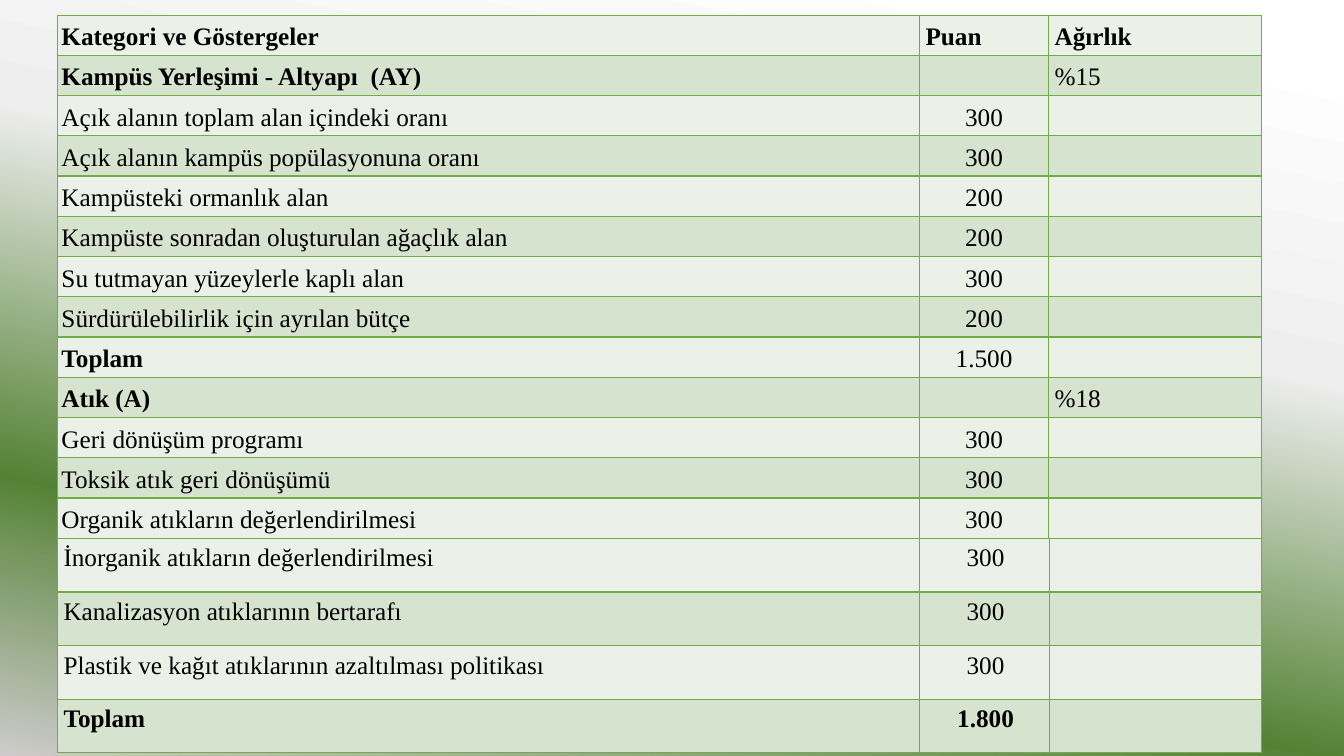
"""Build the campus sustainability scoring slide with its two indicator tables."""
from dataclasses import dataclass

from lxml.etree import SubElement
from pptx import Presentation
from pptx.dml.color import RGBColor
from pptx.enum.text import PP_ALIGN
from pptx.oxml.ns import qn
from pptx.util import Inches, Pt


@dataclass(frozen=True)
class Theme:
    font: str = "Times New Roman"
    size: float = 18
    text: str = "000000"
    border: str = "70AD47"
    border_width: float = 1
    bands: tuple = ("EBF1E9", "D5E3CF")
    line_spacing: float = 1.07
    backdrop: tuple = ((6, "FFFFFF"), (37, "EEEEEE"), (73, "548235"), (80, "75965E"), (100, "CDCBCB"))
    backdrop_angle: int = 102


@dataclass(frozen=True)
class Entry:
    label: str
    points: str = ""
    weight: str = ""
    bold: tuple = (False, False, False)


@dataclass(frozen=True)
class ScoreTable:
    top: float
    height: float
    widths: tuple
    margins: dict
    indents: tuple
    entries: tuple
    has_header: bool = False


THEME = Theme()
TABLE_LEFT = 0.57
LABEL_BOLD = (True, False, False)
ALL_BOLD = (True, True, True)

MAIN_SCORES = ScoreTable(
    top=0.15,
    height=5.19,
    widths=(8.55, 1.28, 2.11),
    margins={"margin_left": 0.04, "margin_top": 0.06, "margin_right": 0.06, "margin_bottom": 0},
    indents=(0, 0.02, 0.02),
    has_header=True,
    entries=(
        Entry("Kategori ve Göstergeler", "Puan", "Ağırlık", ALL_BOLD),
        Entry("Kampüs Yerleşimi - Altyapı  (AY)", weight="%15", bold=LABEL_BOLD),
        Entry("Açık alanın toplam alan içindeki oranı", "300"),
        Entry("Açık alanın kampüs popülasyonuna oranı", "300"),
        Entry("Kampüsteki ormanlık alan", "200"),
        Entry("Kampüste sonradan oluşturulan ağaçlık alan", "200"),
        Entry("Su tutmayan yüzeylerle kaplı alan", "300"),
        Entry("Sürdürülebilirlik için ayrılan bütçe", "200"),
        Entry("Toplam", "1.500", bold=LABEL_BOLD),
        Entry("Atık (A)", weight="%18", bold=LABEL_BOLD),
        Entry("Geri dönüşüm programı", "300"),
        Entry("Toksik atık geri dönüşümü", "300"),
        Entry("Organik atıkların değerlendirilmesi", "300"),
    ),
)

WASTE_SCORES = ScoreTable(
    top=5.34,
    height=2.13,
    widths=(8.55, 1.29, 2.1),
    margins={"margin_left": 0, "margin_top": 0.04, "margin_right": 0.06, "margin_bottom": 0},
    indents=(0.06, 0.08, 0.08),
    entries=(
        Entry("İnorganik atıkların değerlendirilmesi", "300"),
        Entry("Kanalizasyon atıklarının bertarafı", "300"),
        Entry("Plastik ve kağıt atıklarının azaltılması politikası", "300"),
        Entry("Toplam", "1.800", bold=ALL_BOLD),
    ),
)


def paint_backdrop(page) -> None:
    """Fill the slide background with the theme gradient."""
    fill = page.background.fill
    fill.gradient()
    gradient = page.background.fill._fill._gradFill
    stops = gradient.find(qn("a:gsLst"))
    for stop in list(stops):
        stops.remove(stop)
    for position, color in THEME.backdrop:
        stop = SubElement(stops, qn("a:gs"), pos=str(position * 1000))
        SubElement(stop, qn("a:srgbClr"), val=color)
    gradient.find(qn("a:lin")).set("ang", str(THEME.backdrop_angle * 60000))


def draw_borders(cell) -> None:
    """Draw a thin line along every side of a cell."""
    properties = cell._tc.get_or_add_tcPr()
    for side in ("a:lnL", "a:lnR", "a:lnT", "a:lnB"):
        line = SubElement(properties, qn(side), w=str(Pt(THEME.border_width)))
        solid = SubElement(line, qn("a:solidFill"))
        SubElement(solid, qn("a:srgbClr"), val=THEME.border)


def write_cell(cell, words: str, bold: bool, indent: float, alignment: PP_ALIGN) -> None:
    """Write one formatted line of text into a cell."""
    para = cell.text_frame.paragraphs[0]
    para.alignment = alignment
    para.line_spacing = THEME.line_spacing
    para._p.get_or_add_pPr().set("marL", str(Inches(indent)))
    span = para.add_run()
    span.text = words
    formats = {"name": THEME.font, "size": Pt(THEME.size), "bold": bold}
    for name, value in formats.items():
        setattr(span.font, name, value)
    span.font.color.rgb = RGBColor.from_string(THEME.text)


def draw_scores(page, scores: ScoreTable) -> None:
    """Draw a banded table of indicators, points and weights."""
    count = len(scores.entries)
    frame = page.shapes.add_table(
        count, len(scores.widths), Inches(TABLE_LEFT), Inches(scores.top),
        Inches(sum(scores.widths)), Inches(scores.height),
    )
    table = frame.table
    table.first_row = scores.has_header
    table.horz_banding = False
    for column, width in zip(table.columns, scores.widths):
        column.width = Inches(width)
    for index, (row, entry) in enumerate(zip(table.rows, scores.entries)):
        row.height = Inches(scores.height / count)
        is_header = scores.has_header and index == 0
        band = RGBColor.from_string(THEME.bands[index % 2])
        words = (entry.label, entry.points, entry.weight)
        for position, cell in enumerate(row.cells):
            for name, value in scores.margins.items():
                setattr(cell, name, Inches(value))
            draw_borders(cell)
            cell.fill.solid()
            cell.fill.fore_color.rgb = band
            centred = position == 1 and not is_header
            alignment = PP_ALIGN.CENTER if centred else PP_ALIGN.LEFT
            write_cell(cell, words[position], entry.bold[position], scores.indents[position], alignment)


def main() -> None:
    """Create and save the deck."""
    deck = Presentation()
    deck.slide_width = Inches(13.33)
    deck.slide_height = Inches(7.5)
    page = deck.slides.add_slide(deck.slide_layouts[6])
    paint_backdrop(page)
    for scores in (MAIN_SCORES, WASTE_SCORES):
        draw_scores(page, scores)
    deck.save("out.pptx")


if __name__ == "__main__":
    main()
